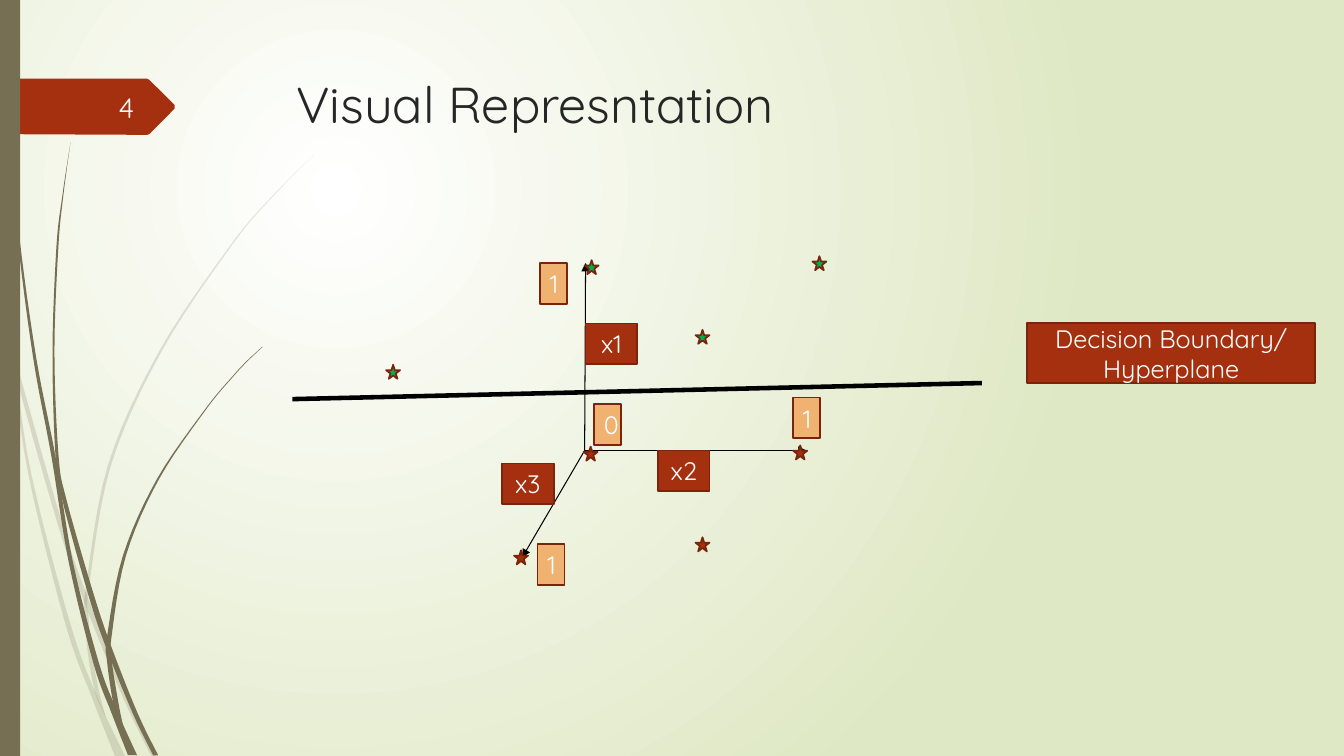
from lxml.etree import SubElement
from pptx import Presentation
from pptx.dml.color import RGBColor
from pptx.enum.shapes import MSO_CONNECTOR, MSO_SHAPE
from pptx.enum.text import MSO_ANCHOR, PP_ALIGN
from pptx.oxml import parse_xml
from pptx.oxml.ns import nsdecls, qn
from pptx.util import Pt

RUST, DARK_RUST, OLIVE = "A53010", "7A240C", "766F54"
PEACH, GREEN, WHITE = "F0B270", "00B050", "FFFFFF"
rgb = RGBColor.from_string


def paint(shape, fill, border=None):
    shape.shadow.inherit = False
    shape.fill.solid()
    shape.fill.fore_color.rgb = rgb(fill)
    if border:
        shape.line.color.rgb = rgb(border)
        shape.line.width = Pt(1.25)
    else:
        shape.line.fill.background()


def write(shape, text, size, colour, align, anchor):
    frame = shape.text_frame
    frame.text = text
    frame.word_wrap = True
    frame.vertical_anchor = anchor
    paragraph = frame.paragraphs[0]
    paragraph.alignment = align
    paragraph.font.size = Pt(size)
    paragraph.font.name = "Quicksand"
    paragraph.font.color.rgb = rgb(colour)


deck = Presentation()
deck.slide_width, deck.slide_height = Pt(960), Pt(540)
slide = deck.slides.add_slide(deck.slide_layouts[6])
shapes = slide.shapes

# Background: radial gradient centred in the upper left
backdrop = slide.background.fill
backdrop.gradient()
for stop, colour in zip(backdrop.gradient_stops, (WHITE, "DFE8C4")):
    stop.color.rgb = rgb(colour)
gradient = next(slide.element.iter(qn("a:gradFill")))
gradient.replace(gradient.find(qn("a:lin")), parse_xml(
    f'<a:path {nsdecls("a")} path="circle">'
    '<a:fillToRect l="50000" t="50000" r="100000" b="100000"/></a:path>'))

# Grass blades: opacity, then centre x, y and width along each blade
blades = [
    (20, [(0, 203, 0), (1.3, 215, 2.6), (8.5, 252, 1.6), (21.2, 338, 2.2),
          (48.6, 446, 3.6), (68, 499, 4), (85.7, 540, 7.2)]),
    (20, [(10.1, 248, 0), (13.7, 271, 2.9), (43.1, 375, 3.4), (62.4, 431, 3.8),
          (90, 499, 3.6), (109.8, 540, 3.6)]),
    (20, [(224.6, 110.2, 0), (193, 142, 0.7), (164.5, 176, 1), (114.5, 251, 1.8),
          (78.1, 332.5, 2.2), (62.3, 420.5, 2.2), (62, 440, 2.5), (64, 465, 2.9),
          (69.5, 495, 3), (75.6, 512, 0)]),
    (100, [(2.5, 0, 0.7), (3.2, 35, 0.8), (5.4, 79, 0.8), (13, 167.5, 1.4),
           (24.8, 255.6, 2.2), (38.2, 326, 2.9), (50.5, 401, 3), (68.8, 474, 4),
           (82.3, 510, 4.7), (94.7, 539.5, 6.5)]),
    (100, [(50.4, 101.5, 0), (45, 139, 0.7), (41, 176.4, 1.4), (38.2, 251, 1.4),
           (40.7, 325, 2.2), (46, 357, 3), (65.4, 426, 4), (78.3, 464, 4),
           (96.8, 510, 3.5), (111.2, 539.5, 3.6)]),
    (100, [(187.6, 247.7, 0.4), (176.4, 258.1, 0.7), (166.3, 269, 0.7),
           (147.2, 292, 0.8), (113, 342, 1.5), (88.9, 397, 2.2), (78.1, 455, 3.2),
           (78.2, 472.3, 3.4), (83, 503, 3.6), (87.8, 517.7, 0)]),
]
outlines = []
STEPS = 6
for opacity, knots in blades:
    # Catmull-Rom curve through the knots
    ends = [knots[0], *knots, knots[-1]]
    spine = []
    for before, start, end, after in zip(ends, ends[1:], ends[2:], ends[3:]):
        for step in range(STEPS):
            t = step / STEPS
            spine.append([
                b + (c - a) * t / 2 + (2 * a - 5 * b + 4 * c - d) * t ** 2 / 2
                + (3 * b - a - 3 * c + d) * t ** 3 / 2
                for a, b, c, d in zip(before, start, end, after)])
    spine.append(knots[-1])
    right_edge = [(x + width / 2, y) for x, y, width in spine]
    left_edge = [(x - width / 2, y) for x, y, width in spine]
    outlines.append((OLIVE, opacity, right_edge + left_edge[::-1]))

# Page number tag
outlines.append((RUST, 100, [(0, 56.2), (105, 56.2), (106.6, 57), (124.8, 75),
                             (124.8, 77.5), (106.6, 95.8), (105, 96.3), (0, 95.8)]))

for colour, opacity, points in outlines:
    grid = [(x * 100, y * 100) for x, y in points]
    builder = shapes.build_freeform(*grid[0], scale=Pt(1) / 100)
    builder.add_line_segments(grid[1:], close=True)
    outline = builder.convert_to_shape()
    paint(outline, colour)
    if opacity < 100:
        tint = next(outline.element.spPr.iter(qn("a:srgbClr")))
        SubElement(tint, qn("a:alpha"), val=str(opacity * 1000))

side_bar = shapes.add_shape(MSO_SHAPE.RECTANGLE, 0, 0, Pt(14.4), Pt(540))
paint(side_bar, OLIVE)

# Title and page number
title = shapes.add_textbox(Pt(204.5), Pt(49), Pt(702), Pt(101))
write(title, "Visual Represntation", 36, "262626", PP_ALIGN.LEFT, MSO_ANCHOR.TOP)
page_number = shapes.add_textbox(Pt(41.8), Pt(62), Pt(61.2), Pt(28.8))
write(page_number, "4", 20, "FEFFFF", PP_ALIGN.RIGHT, MSO_ANCHOR.MIDDLE)

# Axes from the origin, then the decision boundary
origin = (417.6, 321.8)
lines = [
    (origin, (418.3, 187.9), 0.75, True),
    (origin, (576, 321.8), 0.75, True),
    (origin, (373, 398.2), 0.75, True),
    ((208.8, 285.1), (701.3, 273.6), 3.25, False),
]
for start, end, weight, is_axis in lines:
    line = shapes.add_connector(MSO_CONNECTOR.STRAIGHT,
                                *(Pt(value) for value in start + end))
    line.line.color.rgb = rgb("000000")
    line.line.width = Pt(weight)
    if is_axis:
        SubElement(line.line._get_or_add_ln(), qn("a:tailEnd"), type="triangle")
    SubElement(line.element.spPr, qn("a:effectLst"))

# Axis names, tick values and boundary label
NAME, TICK = (36.9, 29), (19.4, 29)
labels = [
    ("x1", 418.3, 231, NAME, RUST),
    ("x2", 470, 321.8, NAME, RUST),
    ("x3", 358.6, 331, NAME, RUST),
    ("0", 424.2, 288.7, TICK, PEACH),
    ("1", 566.5, 284, TICK, PEACH),
    ("1", 385.8, 187.9, TICK, PEACH),
    ("1", 383.9, 388.8, TICK, PEACH),
    ("Decision Boundary/ Hyperplane", 733.5, 231, (206, 42.7), RUST),
]
for text, left, top, (width, height), fill in labels:
    label = shapes.add_shape(MSO_SHAPE.RECTANGLE, Pt(left), Pt(top), Pt(width), Pt(height))
    paint(label, fill, DARK_RUST)
    write(label, text, 18, WHITE, PP_ALIGN.CENTER, MSO_ANCHOR.MIDDLE)

# Data points of the two classes
classes = {
    RUST: [(496.8, 383.8), (566.6, 318.2), (367.2, 393.1), (416.9, 319)],
    GREEN: [(417.6, 185.8), (580.3, 183), (275.8, 260.6), (496.8, 235.6)],
}
for colour, points in classes.items():
    for left, top in points:
        star = shapes.add_shape(MSO_SHAPE.STAR_5_POINT, Pt(left), Pt(top), Pt(10), Pt(10))
        paint(star, colour, DARK_RUST)

deck.save("out.pptx")
